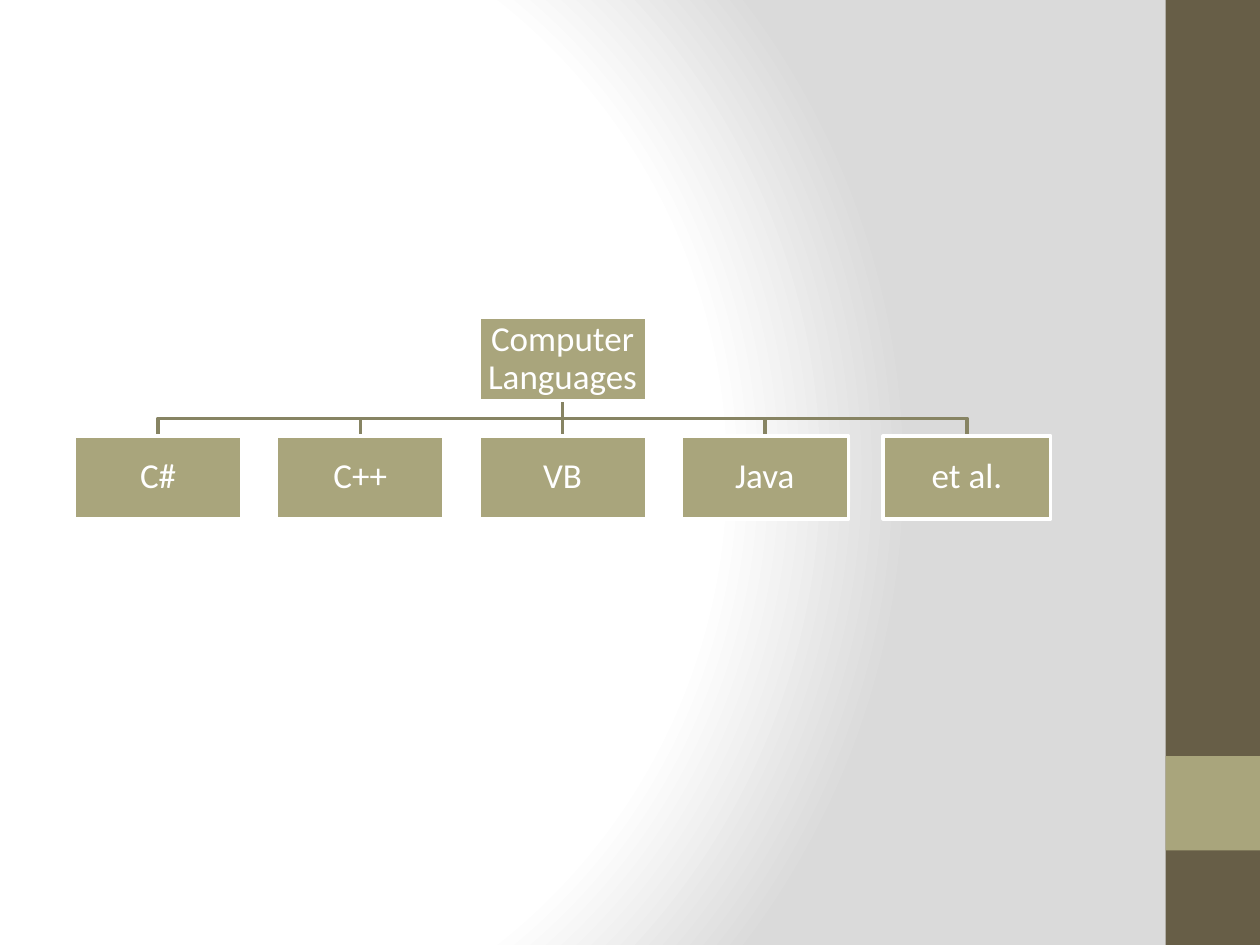
from dataclasses import dataclass

from pptx import Presentation
from pptx.dml.color import RGBColor
from pptx.enum.shapes import MSO_CONNECTOR, MSO_SHAPE
from pptx.enum.text import MSO_ANCHOR, PP_ALIGN
from pptx.oxml import parse_xml
from pptx.oxml.ns import nsdecls, qn
from pptx.oxml.xmlchemy import OxmlElement
from pptx.util import Inches, Pt

RECT = MSO_SHAPE.RECTANGLE
STRAIGHT = MSO_CONNECTOR.STRAIGHT
MIDDLE = MSO_ANCHOR.MIDDLE
CENTER = PP_ALIGN.CENTER


@dataclass(frozen=True)
class Theme:
    white: str = "FFFFFF"
    grey: str = "DADADA"
    bar: str = "675E47"
    accent: str = "A9A57C"
    link: str = "878463"
    font: str = "Calibri"
    size: float = 20
    line_width: float = 2


@dataclass(frozen=True)
class Node:
    text: str
    left: float
    top: float
    width: float = 1.33
    height: float = 0.66

    @property
    def center(self) -> float:
        return self.left + self.width / 2


THEME = Theme()


def rgb(value: str) -> RGBColor:
    return RGBColor.from_string(value)


def set_background(s) -> None:
    """Radial gradient centred a fifth of the way across the slide."""
    stops = "".join(
        f'<a:gs pos="{pos * 1000}"><a:srgbClr val="{color}"/></a:gs>'
        for pos, color in ((0, THEME.white), (75, THEME.white), (100, THEME.grey))
    )
    s.background.fill.solid()
    bg = s.element.find(f".//{qn('p:bgPr')}")
    bg.replace(bg[0], parse_xml(
        f'<a:gradFill {nsdecls("a")} rotWithShape="1"><a:gsLst>{stops}</a:gsLst>'
        '<a:path path="circle">'
        '<a:fillToRect l="20000" t="50000" r="100000" b="50000"/>'
        "</a:path></a:gradFill>"
    ))


def add_rect(s, left: float, top: float, width: float, height: float, color: str):
    sp = s.shapes.add_shape(RECT, *map(Inches, (left, top, width, height)))
    sp.shadow.inherit = False
    sp.fill.solid()
    sp.fill.fore_color.rgb = rgb(color)
    sp.line.fill.background()
    return sp


def style_line(line, color: str) -> None:
    line.color.rgb = rgb(color)
    line.width = Pt(THEME.line_width)


def add_node(s, node: Node) -> None:
    sp = add_rect(s, node.left, node.top, node.width, node.height, THEME.accent)
    style_line(sp.line, THEME.white)
    tf = sp.text_frame
    tf.word_wrap = True
    tf.vertical_anchor = MIDDLE
    tf.margin_left = tf.margin_right = tf.margin_top = tf.margin_bottom = Inches(0.01)
    p = tf.paragraphs[0]
    p.text = node.text
    p.alignment = CENTER
    p.line_spacing = 0.9
    p.font.name = THEME.font
    p.font.size = Pt(THEME.size)
    p.font.color.rgb = rgb(THEME.white)


def add_link(s, parent: Node, child: Node) -> None:
    """Straight line to a child right below, otherwise a two-bend line."""
    start, end = parent.top + parent.height, child.top
    x1, y1, x2, y2 = map(Inches, (parent.center, start, child.center, end))
    if x1 == x2:
        sp = s.shapes.add_connector(STRAIGHT, x1, y1, x2, y2)
        sp.element.spPr.append(OxmlElement("a:effectLst"))
    else:
        bend = (y1 + y2) // 2
        builder = s.shapes.build_freeform(x1, y1)
        builder.add_line_segments([(x1, bend), (x2, bend), (x2, y2)], close=False)
        sp = builder.convert_to_shape()
        sp.fill.background()
        sp.shadow.inherit = False
    style_line(sp.line, THEME.link)


def main() -> None:
    prs = Presentation()
    prs.slide_width, prs.slide_height = Inches(10), Inches(7.5)
    s = prs.slides.add_slide(prs.slide_layouts[6])
    set_background(s)

    # Side bar with accent block
    add_rect(s, 9.25, 0, 0.75, 7.5, THEME.bar)
    add_rect(s, 9.25, 6, 0.75, 0.75, THEME.accent)

    # Language tree: evenly spaced children, root above the middle one
    names = ("C#", "C++", "VB", "Java", "et al.")
    first, last = 0.59, 7.01
    pitch = (last - first) / (len(names) - 1)
    children = [Node(name, first + i * pitch, 3.46) for i, name in enumerate(names)]
    root = Node("Computer Languages", children[len(children) // 2].left, 2.52)
    for child in children:
        add_link(s, root, child)
    for node in (root, *children):
        add_node(s, node)

    prs.save("out.pptx")


if __name__ == "__main__":
    main()
